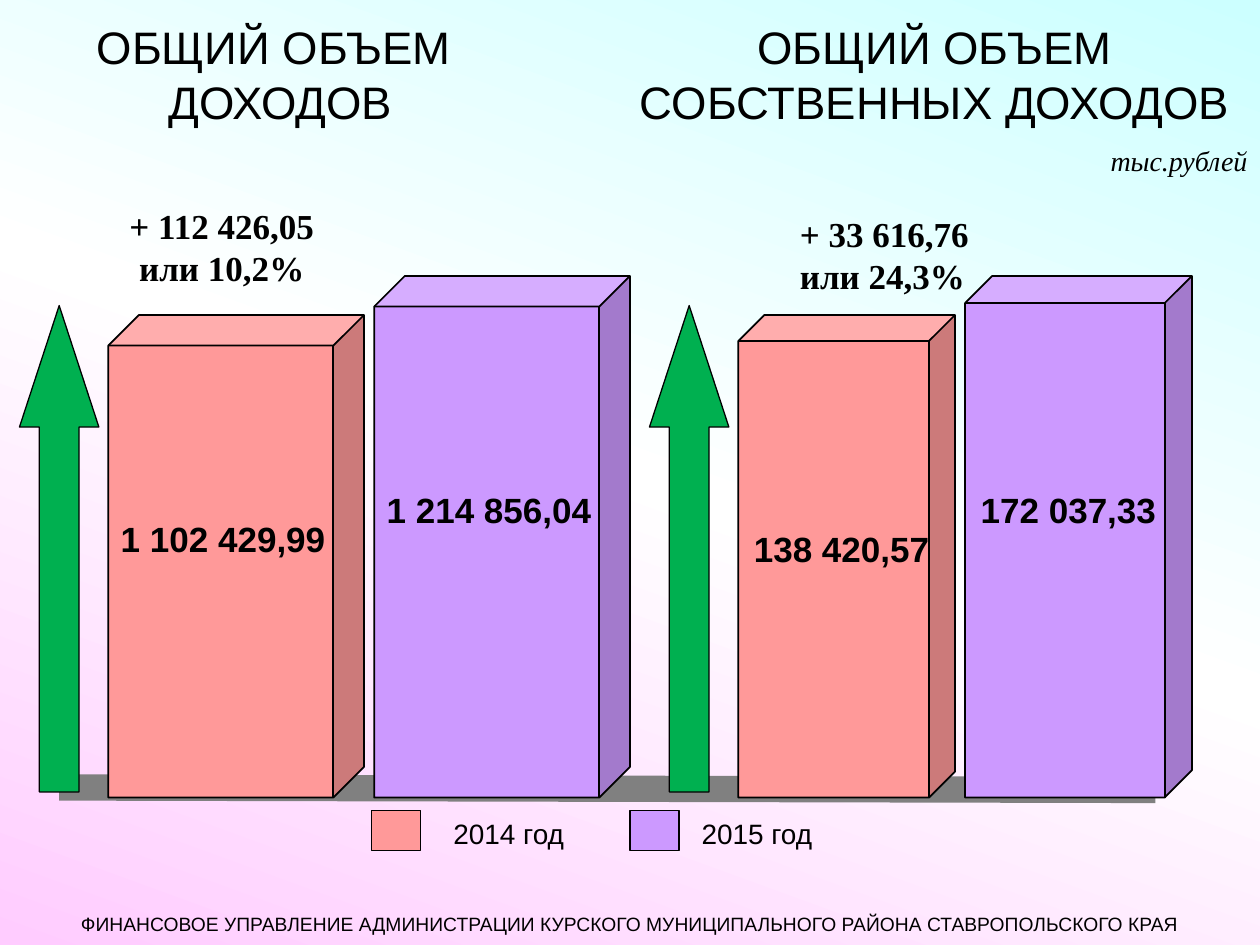
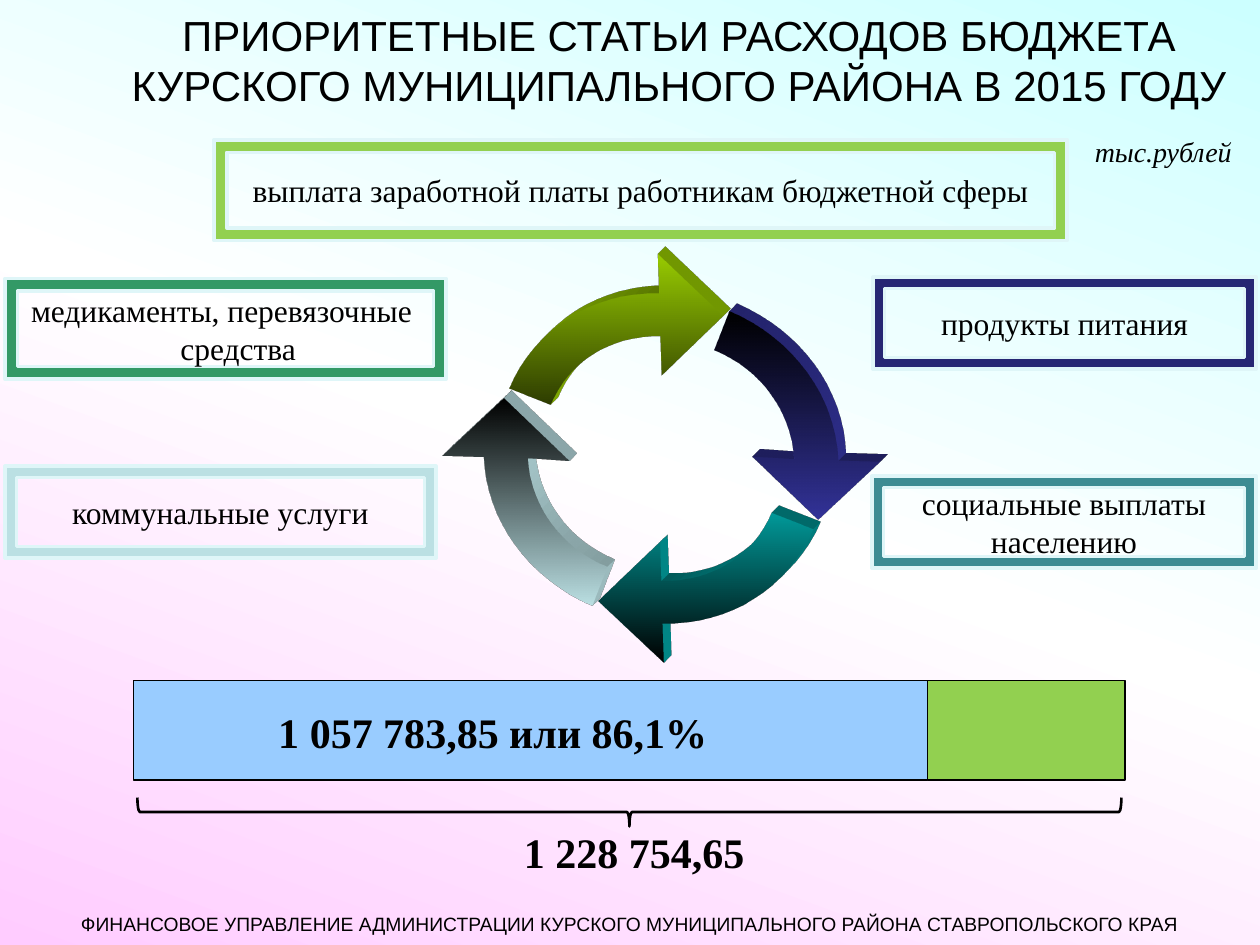
from dataclasses import dataclass

import pptx
import pptx.dml.color
import pptx.enum.shapes
import pptx.enum.text
import pptx.oxml
import pptx.oxml.ns
import pptx.util
from lxml import etree

Inches = pptx.util.Inches
SHAPES = pptx.enum.shapes.MSO_SHAPE
ALIGN = pptx.enum.text.PP_ALIGN
ANCHOR = pptx.enum.text.MSO_ANCHOR


class Theme:
    sans, serif = "Arial", "Times New Roman"
    ink, year_2014, year_2015 = "000000", "FF9999", "CC99FF"
    growth, floor, share, rest = "00B050", "808080", "99CCFF", "92D050"
    frame_line = "DFF6F8"
    backdrop = [(0, "CCFFFF"), (50, "FFFFFF"), (100, "FFCCFF")]
    title, subtitle, total, value, label, note, footer = 26, 24, 24, 20, 18, 16, 11


@dataclass
class Box:
    left: float
    top: float
    width: float
    height: float

    def inside(self, left, top, width, height):
        """Return a box given by its offset from this one."""
        return Box(self.left + left, self.top + top, width, height)

    def lengths(self):
        return [Inches(n) for n in (self.left, self.top, self.width, self.height)]


PAGE = Box(0, 0, 10, 7.5)


def rgb(colour):
    return pptx.dml.color.RGBColor.from_string(colour)


def write(frame, *lines, size, font=Theme.sans, bold=False, italic=False,
          align=ALIGN.LEFT, anchor=ANCHOR.TOP, last_indent=0):
    frame.word_wrap = True
    frame.vertical_anchor = anchor
    for number, line in enumerate(lines):
        para = frame.add_paragraph() if number else frame.paragraphs[0]
        para.alignment = align
        span = para.add_run()
        span.text = line
        span.font.name, span.font.size = font, pptx.util.Pt(size)
        span.font.bold, span.font.italic = bold, italic
        span.font.color.rgb = rgb(Theme.ink)
    if last_indent:
        para._p.get_or_add_pPr().set("marL", str(Inches(last_indent)))


def add_text(page, box, *lines, **style):
    write(page.shapes.add_textbox(*box.lengths()).text_frame, *lines, **style)


def add_shape(page, kind, box, fill=None, line=Theme.ink, weight=0.75, adjust=()):
    shape = page.shapes.add_shape(kind, *box.lengths())
    shape.shadow.inherit = False
    if fill:
        shape.fill.solid()
        shape.fill.fore_color.rgb = rgb(fill)
    else:
        shape.fill.background()
    shape.line.color.rgb = rgb(line)
    shape.line.width = pptx.util.Pt(weight)
    for number, amount in enumerate(adjust):
        shape.adjustments[number] = amount
    return shape


def paint_gradient(fill, element, stops, angle):
    """Fill with (percent, colour) stops; the angle runs clockwise."""
    fill.gradient()
    fill.gradient_angle = 360 - angle
    stop_list = element.find(".//" + pptx.oxml.ns.qn("a:gsLst"))
    for stop in list(stop_list):
        stop_list.remove(stop)
    for percent, colour in stops:
        stop = etree.SubElement(stop_list, pptx.oxml.ns.qn("a:gs"), pos=str(percent * 1000))
        etree.SubElement(stop, pptx.oxml.ns.qn("a:srgbClr"), val=colour)


def add_page(deck):
    page = deck.slides.add_slide(deck.slide_layouts[6])
    paint_gradient(page.background.fill, page._element, Theme.backdrop, 110)
    add_text(page, PAGE.inside(0, 7.19, 10, 0.29),
             "ФИНАНСОВОЕ УПРАВЛЕНИЕ АДМИНИСТРАЦИИ КУРСКОГО МУНИЦИПАЛЬНОГО РАЙОНА "
             "СТАВРОПОЛЬСКОГО КРАЯ", size=Theme.footer, align=ALIGN.CENTER)
    return page


def add_title(page, box, *lines, size):
    add_text(page, box, *lines, size=size, align=ALIGN.CENTER, anchor=ANCHOR.MIDDLE)


def add_unit(page, box, align):
    add_text(page, box, "тыс.рублей", size=Theme.note, font=Theme.serif,
             italic=True, align=align)


def add_floor(page):
    floor = page.shapes.add_connector(pptx.enum.shapes.MSO_CONNECTOR.STRAIGHT,
                                      Inches(0.47), Inches(6.25), Inches(9.17), Inches(6.27))
    floor.line.color.rgb = rgb(Theme.floor)
    floor.line.width = pptx.util.Pt(15)
    etree.SubElement(floor._element.spPr, pptx.oxml.ns.qn("a:effectLst"))


def add_income_bars(page, box, widths, values, value_boxes, align):
    """Draw the growth arrow and one cube per year, standing on the box bottom."""
    arrow = add_shape(page, SHAPES.RIGHT_ARROW, box.inside(-1.46, 1.85, 3.86, 0.63),
                      Theme.growth, adjust=(0.5, 1.53))
    arrow.rotation = 270
    left = 0.86
    for width, height, colour in zip(widths, (3.83, 4.14), (Theme.year_2014, Theme.year_2015)):
        add_shape(page, SHAPES.CUBE, box.inside(left, box.height - height, width, height),
                  colour, weight=1, adjust=(0.12,))
        left += width + 0.08
    for value, (value_left, top, width) in zip(values, value_boxes):
        add_text(page, box.inside(value_left, top, width, 0.44), value,
                 size=Theme.value, bold=True, align=align)


def add_legend(page, box):
    entries = [(0, 0.55, Theme.year_2014, "2014 год"), (2.05, 2.52, Theme.year_2015, "2015 год")]
    for key_left, text_left, colour, year in entries:
        add_shape(page, SHAPES.RECTANGLE, box.inside(key_left, 0, 0.39, 0.32), colour)
        add_text(page, box.inside(text_left, 0, 1.34, 0.37), year, size=Theme.note)


def income_page(deck):
    page = add_page(deck)
    add_floor(page)
    add_income_bars(page, Box(0, 2.19, 5, 4.14), (2.03, 2.03),
                    ("1 102 429,99", "1 214 856,04"),
                    ((0.86, 1.87, 1.95), (2.97, 1.64, 1.88)), ALIGN.LEFT)
    add_income_bars(page, Box(5, 2.19, 5, 4.14), (1.72, 1.8),
                    ("138 420,57", "172 037,33"),
                    ((0.86, 1.95, 1.64), (2.66, 1.64, 1.64)), ALIGN.CENTER)
    growth = dict(size=Theme.value, font=Theme.serif, bold=True)
    add_text(page, Box(0.7, 1.57, 2.12, 0.77), "+ 112 426,05 или 10,2%",
             align=ALIGN.CENTER, **growth)
    add_text(page, Box(6.25, 1.64, 1.73, 0.77), "+ 33 616,76 или 24,3%", **growth)
    add_legend(page, Box(2.95, 6.43, 3.86, 0.37))
    add_title(page, Box(0, 0, 4.45, 1.17), "ОБЩИЙ ОБЪЕМ ", "ДОХОДОВ", size=Theme.title)
    add_title(page, Box(4.84, 0, 5.16, 1.17), "ОБЩИЙ ОБЪЕМ СОБСТВЕННЫХ ДОХОДОВ",
              size=Theme.title)
    add_unit(page, Box(8.44, 1.09, 1.56, 0.37), ALIGN.RIGHT)


def bend(shape, first):
    """Turn the three line segments from the given one into a single curve."""
    lines = list(shape._element.iter(pptx.oxml.ns.qn("a:lnTo")))[first:first + 3]
    cubic = etree.Element(pptx.oxml.ns.qn("a:cubicBezTo"))
    lines[0].addprevious(cubic)
    for line in lines:
        cubic.append(line[0])
        line.getparent().remove(line)


def add_cycle_arrow(page, box, outline, stops, side):
    points = [(Inches(x), Inches(y)) for x, y in outline]
    builder = page.shapes.build_freeform(*points[0])
    builder.add_line_segments(points[1:])
    arrow = builder.convert_to_shape(Inches(box.left), Inches(box.top))
    for first in (4, 0):
        bend(arrow, first)
    arrow.shadow.inherit = False
    arrow.line.fill.background()
    paint_gradient(arrow.fill, arrow._element, stops, 90)
    namespace = pptx.oxml.ns.nsdecls("a")
    for depth in (
        f'<a:scene3d {namespace}><a:camera prst="legacyObliqueTopRight"/>'
        '<a:lightRig rig="legacyFlat3" dir="b"/></a:scene3d>',
        f'<a:sp3d {namespace} extrusionH="{Inches(0.17)}" prstMaterial="legacyMatte">'
        f'<a:extrusionClr><a:srgbClr val="{side}"/></a:extrusionClr></a:sp3d>',
    ):
        arrow._element.spPr.append(pptx.oxml.parse_xml(depth))


def add_cycle(page, box):
    """Draw two arrows and the same two turned by half around the box centre.

    An outline holds the inner curve, the outer curve and the arrowhead.
    """
    lower = [(1.77, 2.6), (2.16, 2.61), (2.5, 2.4), (2.64, 2.06),
             (2.97, 2.19), (2.77, 2.66), (2.31, 2.95), (1.78, 2.94),
             (1.79, 3.25), (1.27, 2.76), (1.76, 2.29), (1.77, 2.6)]
    left = [(0.71, 1.63), (0.73, 2), (0.97, 2.34), (1.34, 2.49),
            (1.22, 2.8), (0.71, 2.58), (0.38, 2.12), (0.36, 1.62),
            (0.03, 1.61), (0.52, 1.15), (1.04, 1.65), (0.71, 1.63)]
    upper, right = ([(box.width - x, box.height - y) for x, y in outline]
                    for outline in (lower, left))
    for outline, top, bottom, side in (
        (lower, "009999", "000000", "009999"),
        (left, "000000", "BBE0E3", "BBE0E3"),
        (upper, "99CC00", "2E3D00", "99CC00"),
        (right, "000000", "333399", "333399"),
    ):
        add_cycle_arrow(page, box, outline, [(0, top), (100, bottom)], side)


def add_spending_frames(page):
    for box, colour, lines, indent in (
        (Box(1.7, 1.11, 6.77, 0.8), Theme.rest,
         ["выплата заработной платы работникам бюджетной сферы"], 0),
        (Box(6.92, 3.78, 3.05, 0.73), "3C8C93", ["социальные выплаты населению"], 0),
        (Box(0.04, 3.7, 3.42, 0.73), "BBE0E3", ["коммунальные услуги"], 0),
        (Box(0.04, 2.21, 3.5, 0.8), "339966", ["медикаменты, перевязочные ", "средства"], 0.2),
        (Box(6.93, 2.2, 3.04, 0.73), "262673", ["продукты питания"], 0),
    ):
        frame = add_shape(page, SHAPES.FRAME, box, colour, Theme.frame_line, weight=2)
        write(frame.text_frame, *lines, size=Theme.label, font=Theme.serif,
              align=ALIGN.CENTER, anchor=ANCHOR.MIDDLE, last_indent=indent)


def add_total_bar(page, box):
    """Draw the priority share, the rest, and the brace with the total."""
    share_width, bar_height = 6.3, 0.79
    add_shape(page, SHAPES.RECTANGLE, box.inside(0, 0, share_width, bar_height), Theme.share)
    add_shape(page, SHAPES.RECTANGLE,
              box.inside(share_width, 0, box.width - share_width, bar_height), Theme.rest)
    brace = add_shape(page, SHAPES.RIGHT_BRACE, box.inside(3.82, -2.86, 0.23, 7.81), weight=1.5)
    brace.rotation = 90
    total = dict(size=Theme.total, font=Theme.serif, bold=True)
    add_text(page, box.inside(1.05, 0.16, 4.15, 0.5), "1 057 783,85 или 86,1%", **total)
    add_text(page, box.inside(3, 1.11, 2.82, 0.5), "1 228 754,65", **total)


def spending_page(deck):
    page = add_page(deck)
    add_title(page, Box(0.78, 0, 9.22, 0.95),
              "ПРИОРИТЕТНЫЕ СТАТЬИ РАСХОДОВ БЮДЖЕТА КУРСКОГО МУНИЦИПАЛЬНОГО РАЙОНА В 2015 ГОДУ",
              size=Theme.subtitle)
    add_cycle(page, Box(3.48, 2.01, 3.53, 3.26))
    add_spending_frames(page)
    add_total_bar(page, Box(1.06, 5.4, 7.87, 1.61))
    add_unit(page, Box(8.59, 1.02, 1.41, 0.37), ALIGN.LEFT)


def main():
    deck = pptx.Presentation()
    deck.slide_width, deck.slide_height = Inches(PAGE.width), Inches(PAGE.height)
    income_page(deck)
    spending_page(deck)
    deck.save("out.pptx")


if __name__ == "__main__":
    main()
